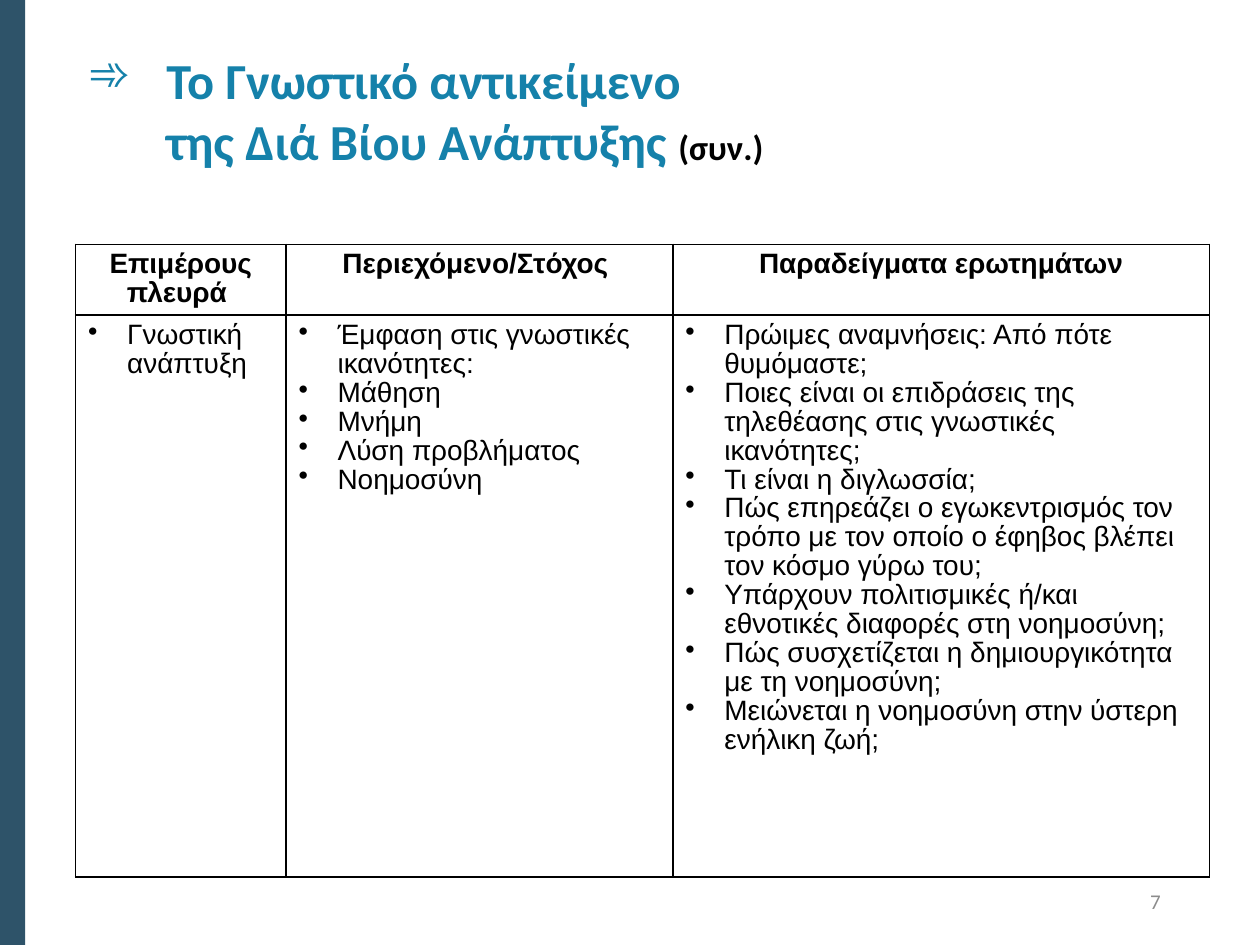
from dataclasses import dataclass

from lxml import etree
from pptx import Presentation
from pptx.dml.color import RGBColor
from pptx.enum import shapes, text
from pptx.oxml import ns
from pptx.util import Inches, Pt


@dataclass(frozen=True)
class Theme:
    """Colours, fonts and type sizes of the deck."""
    bar: str = "2E5369"
    heading: str = "1581AA"
    ink: str = "000000"
    paper: str = "FFFFFF"
    muted: str = "8C8C8C"
    heading_font: str = "Calibri"
    body_font: str = "Arial"
    heading_size: float = 28.8
    suffix_size: float = 19.8
    body_size: float = 16
    number_size: float = 12
    border: float = 0.96
    spacing: float = 0.93


THEME = Theme()
COLUMNS = [
    (1.67, "Επιμέρους πλευρά ", ["Γνωστική ανάπτυξη"]),
    (3.07, "Περιεχόμενο/Στόχος ", [
        "Έμφαση στις γνωστικές ικανότητες:",
        "Μάθηση",
        "Μνήμη",
        "Λύση προβλήματος",
        "Νοημοσύνη",
    ]),
    (4.26, "Παραδείγματα ερωτημάτων", [
        "Πρώιμες αναμνήσεις: Από πότε θυμόμαστε;",
        "Ποιες είναι οι επιδράσεις της τηλεθέασης στις γνωστικές ικανότητες;",
        "Τι είναι η διγλωσσία;",
        "Πώς επηρεάζει ο εγωκεντρισμός τον τρόπο με τον οποίο ο έφηβος βλέπει τον κόσμο γύρω του;",
        "Υπάρχουν πολιτισμικές ή/και εθνοτικές διαφορές στη νοημοσύνη;",
        "Πώς συσχετίζεται η δημιουργικότητα με τη νοημοσύνη;",
        "Μειώνεται η νοημοσύνη στην ύστερη ενήλικη ζωή;",
    ]),
]
ROW_HEIGHTS = (0.56, 4.46)


def add_span(para, words, *, size, color, font, bold=False):
    """Append formatted words to a paragraph."""
    for index, line in enumerate(words.split("\n")):
        if index:
            para.add_line_break()
        span = para.add_run()
        span.text = line
        span.font.size = Pt(size)
        span.font.name = font
        span.font.bold = bold
        span.font.color.rgb = RGBColor.from_string(color)


def set_bullet(para, mark, indent):
    """Give a paragraph a bullet with a hanging indent."""
    properties = para._p.get_or_add_pPr()
    properties.set("marL", str(Inches(indent)))
    properties.set("indent", str(-Inches(indent)))
    etree.SubElement(properties, ns.qn("a:buChar")).set("char", mark)


def set_borders(cell):
    """Draw a thin line on all four sides of a cell."""
    properties = cell._tc.get_or_add_tcPr()
    for index, side in enumerate(("lnL", "lnR", "lnT", "lnB")):
        line = etree.Element(ns.qn(f"a:{side}"), w=str(Pt(THEME.border)))
        fill = etree.SubElement(line, ns.qn("a:solidFill"))
        etree.SubElement(fill, ns.qn("a:srgbClr")).set("val", THEME.ink)
        properties.insert(index, line)


def fill_cell(cell, lines, *, header):
    """Write a header or a bulleted list into a table cell."""
    cell.fill.solid()
    cell.fill.fore_color.rgb = RGBColor.from_string(THEME.paper)
    set_borders(cell)
    if not header:
        cell.margin_bottom = 0
    for index, line in enumerate(lines):
        frame = cell.text_frame
        para = frame.add_paragraph() if index else frame.paragraphs[0]
        para.line_spacing = THEME.spacing
        if header:
            para.alignment = text.PP_ALIGN.CENTER
        else:
            set_bullet(para, "•", 0.31)
        add_span(para, line, size=THEME.body_size, color=THEME.ink,
                 font=THEME.body_font, bold=header)


def add_side_bar(page, left, top, width, height):
    """Draw the coloured bar on the edge of the page."""
    bar = page.shapes.add_shape(shapes.MSO_SHAPE.RECTANGLE, Inches(left), Inches(top),
                                Inches(width), Inches(height))
    bar.shadow.inherit = False
    bar.fill.solid()
    bar.fill.fore_color.rgb = RGBColor.from_string(THEME.bar)
    bar.line.fill.background()


def add_topic_table(page, left, top, width, height):
    """Build the table of aspects, aims and sample questions."""
    table = page.shapes.add_table(len(ROW_HEIGHTS), len(COLUMNS), Inches(left), Inches(top),
                                  Inches(width), Inches(height)).table
    table.first_row = False
    table.horz_banding = False
    for row, row_height in zip(table.rows, ROW_HEIGHTS):
        row.height = Inches(row_height)
    for index, (column_width, heading, points) in enumerate(COLUMNS):
        table.columns[index].width = Inches(column_width)
        fill_cell(table.cell(0, index), [heading], header=True)
        fill_cell(table.cell(1, index), points, header=False)


def place_title(page, left, top, width, height):
    """Move the title placeholder and write the heading."""
    title = page.shapes.title
    title.left, title.top = Inches(left), Inches(top)
    title.width, title.height = Inches(width), Inches(height)
    frame = title.text_frame
    frame.word_wrap = True
    frame.auto_size = text.MSO_AUTO_SIZE.NONE
    frame.vertical_anchor = text.MSO_ANCHOR.TOP
    para = frame.paragraphs[0]
    para.alignment = text.PP_ALIGN.LEFT
    set_bullet(para, "➾", 0.62)
    add_span(para, "Το Γνωστικό αντικείμενο\nτης Διά Βίου Ανάπτυξης ", size=THEME.heading_size,
             color=THEME.heading, font=THEME.heading_font, bold=True)
    add_span(para, "(συν.)", size=THEME.suffix_size, color=THEME.ink,
             font=THEME.heading_font, bold=True)


def add_page_number(page, left, top, width, height):
    """Write the page number."""
    box = page.shapes.add_textbox(Inches(left), Inches(top), Inches(width), Inches(height))
    frame = box.text_frame
    frame.word_wrap = True
    frame.vertical_anchor = text.MSO_ANCHOR.MIDDLE
    para = frame.paragraphs[0]
    para.alignment = text.PP_ALIGN.RIGHT
    add_span(para, "7", size=THEME.number_size, color=THEME.muted, font=THEME.heading_font)


def main():
    """Build the deck and save it."""
    deck = Presentation()
    deck.slide_width, deck.slide_height = Inches(10), Inches(7.5)
    page = deck.slides.add_slide(deck.slide_layouts[5])
    add_side_bar(page, 0, 0, 0.2, 7.5)
    add_topic_table(page, 0.6, 1.94, 9, sum(ROW_HEIGHTS))
    place_title(page, 0.6, 0.34, 8.74, 0.97)
    add_page_number(page, 7.06, 6.95, 2.25, 0.4)
    deck.save("out.pptx")


if __name__ == "__main__":
    main()
